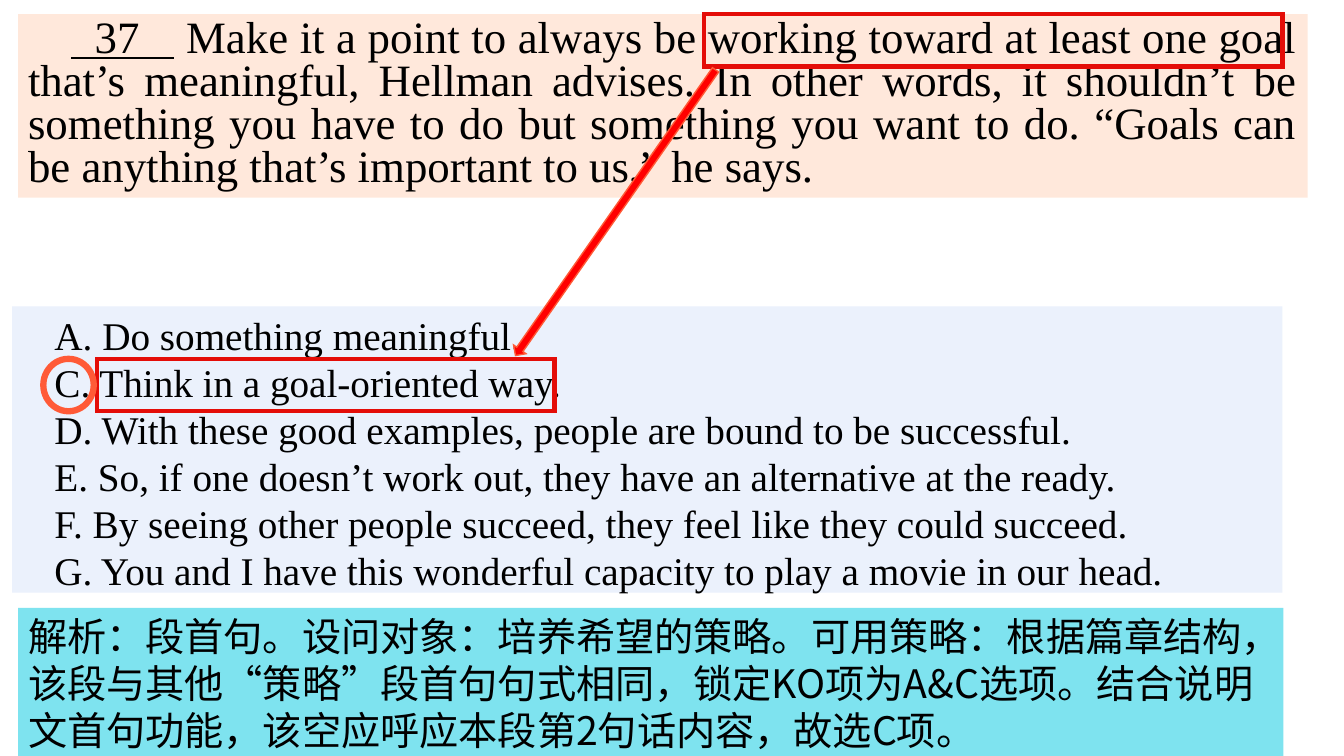
from pptx import Presentation
from pptx.dml.color import RGBColor
from pptx.enum.shapes import MSO_SHAPE
from pptx.enum.text import MSO_ANCHOR, MSO_AUTO_SIZE, PP_ALIGN
from pptx.oxml.xmlchemy import OxmlElement
from pptx.util import Inches, Pt

OPTIONS = [
    "A. Do something meaningful.",
    "C. Think in a goal-oriented way.",
    "D. With these good examples, people are bound to be successful.",
    "E. So, if one doesn’t work out, they have an alternative at the ready.",
    "F. By seeing other people succeed, they feel like they could succeed.",
    "G. You and I have this wonderful capacity to play a movie in our head.",
]
BLANK = "  37   "
PASSAGE = (
    " Make it a point to always be working toward at least one goal that’s "
    "meaningful, Hellman advises. In other words, it shouldn’t be something "
    "you have to do but something you want to do. “Goals can be anything "
    "that’s important to us,” he says."
)
REASON = (
    "解析：段首句。设问对象：培养希望的策略。可用策略：根据篇章结构，"
    "该段与其他“策略”段首句句式相同，锁定KO项为A&C选项。"
    "结合说明文首句功能，该空应呼应本段第2句话内容，故选C项。"
)


def paint(form, hue):
    form.solid()
    form.fore_color.rgb = RGBColor.from_string(hue)


def write(shape, paras, size, pitch, font="Times New Roman", first=0,
          align=PP_ALIGN.LEFT):
    """Fill a shape with paragraphs, each a list of (text, underline) runs."""
    frame = shape.text_frame
    frame.word_wrap = True
    frame.auto_size = MSO_AUTO_SIZE.NONE
    frame.vertical_anchor = MSO_ANCHOR.TOP
    for i, runs in enumerate(paras):
        para = frame.add_paragraph() if i else frame.paragraphs[0]
        para.alignment = align
        para.line_spacing = Pt(pitch)
        para.space_before = para.space_after = Pt(0)
        props = para._p.get_or_add_pPr()
        props.set("marL", "0")
        props.set("indent", str(Inches(first)))
        props.append(OxmlElement("a:buNone"))
        for text, under in runs:
            run = para.add_run()
            run.text = text
            run.font.name = font
            run.font.size = Pt(size)
            run.font.underline = under
            paint(run.font.fill, "000000")
            east = OxmlElement("a:ea")
            east.set("typeface", font)
            run.font._element.find("{*}latin").addnext(east)


deck = Presentation()
deck.slide_width, deck.slide_height = Inches(13.33), Inches(7.5)
slide = deck.slides.add_slide(deck.slide_layouts[1])
title, choices = slide.placeholders
title._element.getparent().remove(title._element)

# Answer choices
choices.left, choices.top = Inches(0.12), Inches(3.04)
choices.width, choices.height = Inches(12.6), Inches(2.84)
paint(choices.fill, "EBF1FC")
write(choices, [[(text, False)] for text in OPTIONS], 28, 33.6, first=0.32)

# Panels, marks and arrow, from back to front
shapes = {}
for name, kind, box, fill, line, weight in [
    ("passage", MSO_SHAPE.RECTANGLE, (0.18, 0.14, 12.79, 1.82), "FFE8DB", None, 0),
    ("answer", MSO_SHAPE.RECTANGLE, (0.96, 3.56, 4.54, 0.52), None, "E40D08", 3),
    ("reason", MSO_SHAPE.RECTANGLE, (0.18, 6.03, 12.55, 1.47), "7EE3EF", None, 0),
    ("clue", MSO_SHAPE.RECTANGLE, (6.98, 0.14, 5.74, 0.52), None, "E40D08", 3),
    ("arrow", MSO_SHAPE.UP_ARROW, (6.03, 0.38, 0.15, 3.46), "FF0000", "FF5A37", 1),
    ("ring", MSO_SHAPE.OVAL, (0.43, 3.56, 0.5, 0.52), None, "FF5A37", 4.5),
]:
    shape = slide.shapes.add_shape(kind, *map(Inches, box))
    shape.shadow.inherit = False
    if fill:
        paint(shape.fill, fill)
    else:
        shape.fill.background()
    if line:
        paint(shape.line.fill, line)
        shape.line.width = Pt(weight)
        miter = OxmlElement("a:miter")
        miter.set("lim", "800000")
        shape.line._get_or_add_ln().append(miter)
    else:
        shape.line.fill.background()
    shapes[name] = shape

shapes["arrow"].rotation = 215
write(shapes["passage"], [[(BLANK, True), (PASSAGE, False)]],
      32, 30.7, first=0.43, align=PP_ALIGN.JUSTIFY)
write(shapes["reason"], [[(REASON, False)]], 28, 33.6, font="Noto Sans CJK SC")

deck.save("out.pptx")
